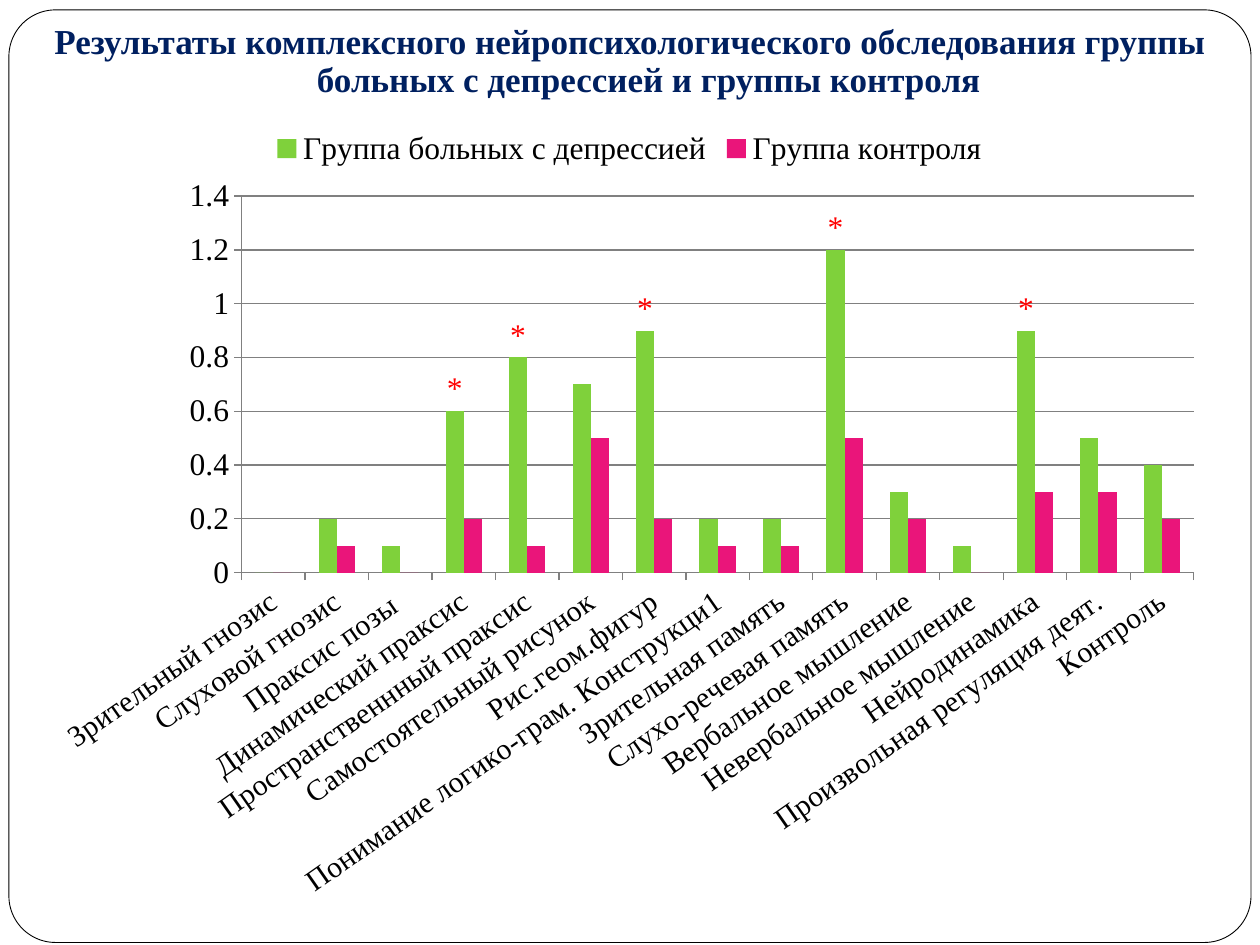
"""Build a slide with a column chart comparing two groups of test results."""
from pptx import Presentation
from pptx.chart.data import CategoryChartData as Data
from pptx.dml.color import RGBColor
from pptx.enum.chart import XL_CHART_TYPE as Kind, XL_LABEL_POSITION as Spot
from pptx.enum.chart import XL_LEGEND_POSITION as Side, XL_TICK_MARK as Tick
from pptx.enum.shapes import MSO_SHAPE as Form
from pptx.enum.text import MSO_ANCHOR as Anchor, MSO_AUTO_SIZE as Fit, PP_ALIGN as Align
from pptx.oxml import parse_xml
from pptx.oxml.ns import nsdecls, qn
from pptx.util import Cm, Pt

FACE = "Times New Roman"


def paint(font, size, tint, bold=False):
    font.name, font.size, font.bold = FACE, Pt(size), bold
    font.color.rgb = RGBColor.from_string(tint)


rows = [
    ("Зрительный гнозис", 0, 0, ""),
    ("Слуховой гнозис", 0.2, 0.1, ""),
    ("Праксис позы ", 0.1, 0, ""),
    ("Динамический праксис", 0.6, 0.2, "*"),
    ("Пространственнный праксис", 0.8, 0.1, "*"),
    ("Самостоятельный рисунок", 0.7, 0.5, ""),
    ("Рис.геом.фигур", 0.9, 0.2, "*"),
    ("Понимание логико-грам. Конструкци1", 0.2, 0.1, ""),
    ("Зрительная память", 0.2, 0.1, ""),
    ("Слухо-речевая память", 1.2, 0.5, "*"),
    ("Вербальное мышление", 0.3, 0.2, ""),
    ("Невербальное мышление", 0.1, 0, ""),
    ("Нейродинамика", 0.9, 0.3, "*"),
    ("Произвольная регуляция деят.", 0.5, 0.3, ""),
    ("Контроль", 0.4, 0.2, ""),
]
names, sick, well, marks = zip(*rows)

deck = Presentation()
deck.slide_width, deck.slide_height = Cm(25.4), Cm(19.05)
slide = deck.slides.add_slide(deck.slide_layouts[5])
shapes = slide.shapes

frame = shapes.add_shape(Form.ROUNDED_RECTANGLE, Cm(0.18), Cm(0.2), Cm(25.04), Cm(18.8))
frame.adjustments[0] = 0.05
frame.shadow.inherit = False
frame.fill.solid()
frame.fill.fore_color.rgb = RGBColor.from_string("FFFFFF")
frame.line.color.rgb = RGBColor.from_string("000000")
frame.line.width = Pt(0.5)
shapes.title.element.addprevious(frame.element)

title = shapes.title
title.left, title.top, title.width, title.height = Cm(0), Cm(0.36), Cm(25.4), Cm(2.51)
text = title.text_frame
text.word_wrap, text.auto_size = True, Fit.NONE
text.vertical_anchor = Anchor.TOP
para = text.paragraphs[0]
para.alignment, para.line_spacing, para.space_before = Align.CENTER, 0.9, Pt(5.8)
props = para._p.get_or_add_pPr()
props.set("marL", str(Cm(0.76)))
props.set("indent", str(Cm(-0.76)))
run = para.add_run()
run.text = ("Результаты комплексного нейропсихологического обследования группы "
            "больных с депрессией и группы контроля")
paint(run.font, 20, "002060", True)

data = Data(number_format="General")
data.categories = names
data.add_series("Группа больных с депрессией", sick)
data.add_series("Группа контроля", well)
chart = shapes.add_chart(Kind.COLUMN_CLUSTERED, Cm(0.84), Cm(2.34),
                         Cm(23.7), Cm(16.15), data).chart
paint(chart.font, 18, "000000")
chart.has_title = False
chart.has_legend = True
chart.legend.position = Side.TOP
chart.legend.include_in_layout = False
paint(chart.legend.font, 18, "000000")

for axis, size in ((chart.category_axis, 17), (chart.value_axis, 18)):
    axis.major_tick_mark, axis.minor_tick_mark = Tick.OUTSIDE, Tick.NONE
    axis.format.line.color.rgb = RGBColor.from_string("808080")
    axis.format.line.width = Pt(0.75)
    paint(axis.tick_labels.font, size, "000000")
chart.category_axis._element.find(qn("c:txPr")).find(qn("a:bodyPr")).set("rot", "-2100000")
axis = chart.value_axis
axis.minimum_scale, axis.maximum_scale, axis.major_unit = 0, 1.4, 0.2
axis.has_major_gridlines = True
axis.major_gridlines.format.line.color.rgb = RGBColor.from_string("808080")
axis.major_gridlines.format.line.width = Pt(0.75)

plot = chart.plots[0]
plot.gap_width, plot.overlap, plot.vary_by_categories = 150, 0, False
for group, tint in zip(plot.series, ("7FD13B", "EA157A")):
    group.format.fill.solid()
    group.format.fill.fore_color.rgb = RGBColor.from_string(tint)
    group.invert_if_negative = False
for spot, mark in enumerate(marks):
    if mark:
        label = plot.series[0].points[spot].data_label
        run = label.text_frame.paragraphs[0].add_run()
        run.text = mark
        paint(run.font, 18, "FF0000")
        label.position = Spot.OUTSIDE_END

area = chart._chartSpace.chart.plotArea
for old in area.findall(qn("c:layout")):
    area.remove(old)
sizes = "".join(f'<c:{key} val="{val}"/>' for key, val in
                (("x", 0.17), ("y", 0.1), ("w", 0.81), ("h", 0.47)))
area.insert(0, parse_xml(
    f'<c:layout {nsdecls("c")}><c:manualLayout><c:layoutTarget val="inner"/>'
    f'<c:xMode val="edge"/><c:yMode val="edge"/>{sizes}</c:manualLayout></c:layout>'))

deck.save("out.pptx")
